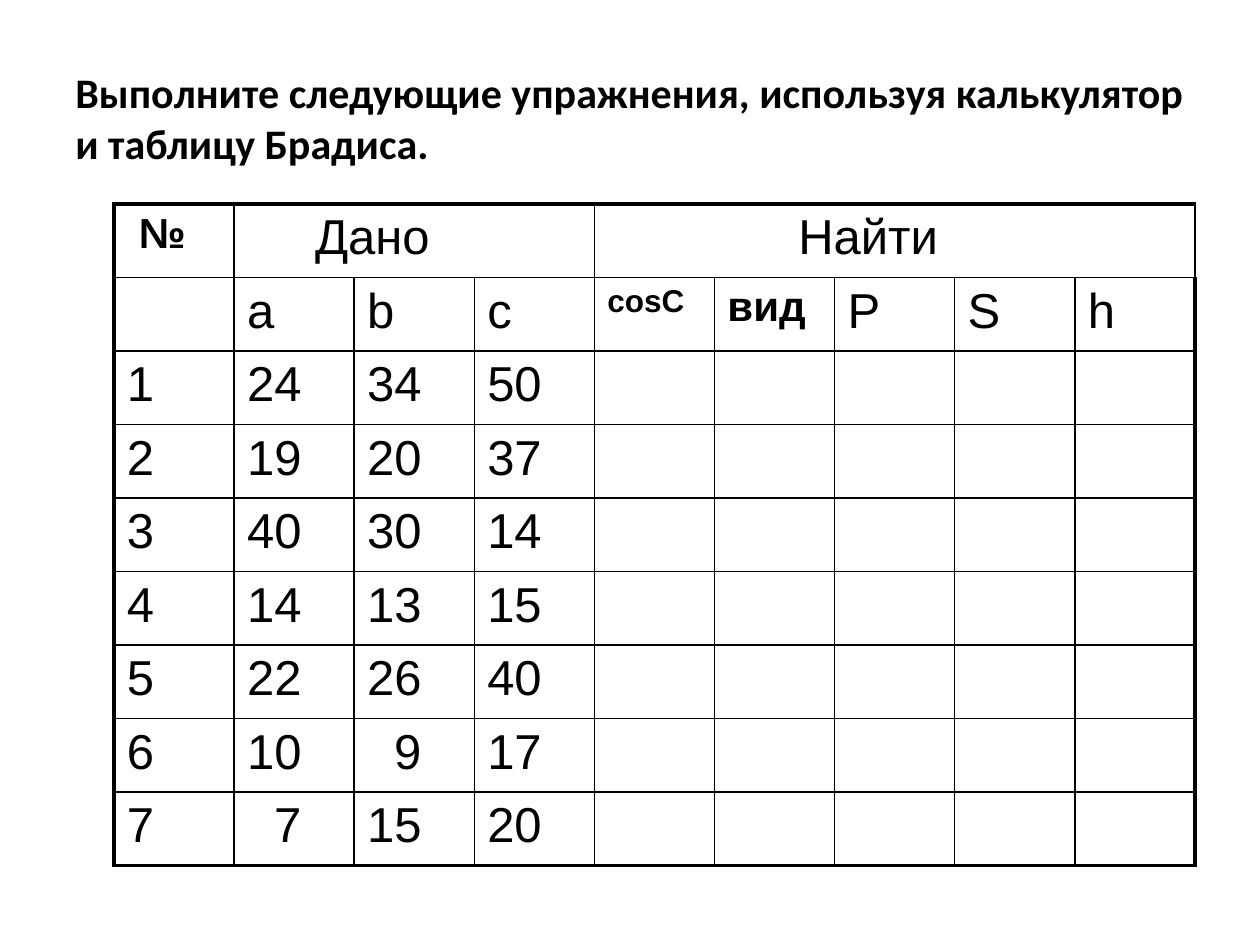
from lxml.etree import SubElement
from pptx import Presentation
from pptx.dml.color import RGBColor
from pptx.enum.text import MSO_ANCHOR
from pptx.oxml.ns import qn
from pptx.util import Emu, Pt

PX = 914400 / 126
THIN, THICK = 1, 2.25
CELL_MARGIN = 13


def px(length):
    return Emu(round(length * PX))


def color(hex_code):
    return RGBColor.from_string(hex_code)


class ExerciseSlide:
    ink = "000000"
    heading_font = "Calibri"
    table_font = "Arial"

    def __init__(self, presentation):
        self.slide = presentation.slides.add_slide(presentation.slide_layouts[6])

    def style_text(self, paragraph, text, font, size, bold=False):
        paragraph.text = text
        for run in paragraph.runs:
            run.font.name = font
            run.font.size = Pt(size)
            run.font.bold = bold
            run.font.color.rgb = color(self.ink)

    def heading(self, text, left, top, width, height):
        frame = self.slide.shapes.add_textbox(
            px(left), px(top), px(width), px(height)).text_frame
        frame.word_wrap = True
        frame.vertical_anchor = MSO_ANCHOR.MIDDLE
        self.style_text(frame.paragraphs[0], text, self.heading_font, 24, bold=True)

    def border(self, cell, side, weight):
        line = SubElement(cell._tc.get_or_add_tcPr(), qn(f"a:ln{side}"), w=str(Pt(weight)))
        fill = SubElement(line, qn("a:solidFill"))
        SubElement(fill, qn("a:srgbClr"), val=self.ink)

    def grid(self, rows, columns, left, top, width, height):
        table = self.slide.shapes.add_table(
            rows, columns, px(left), px(top), px(width), px(height)).table
        table.first_row = table.horz_banding = False
        for column in table.columns:
            column.width = px(width / columns)
        for row in table.rows:
            row.height = px(height / rows)
        # Thick outer frame, thin inner lines
        for r in range(rows):
            for c in range(columns):
                cell = table.cell(r, c)
                outer = {"L": c == 0, "R": c == columns - 1,
                         "T": r == 0, "B": r == rows - 1}
                for side, on_frame in outer.items():
                    self.border(cell, side, THICK if on_frame else THIN)
                cell.fill.background()
        return table

    def entry(self, cell, text, size=28, bold=False, indent=0):
        cell.margin_left = px(CELL_MARGIN + indent)
        self.style_text(cell.text_frame.paragraphs[0], text, self.table_font, size, bold)


def main():
    presentation = Presentation()
    presentation.slide_width, presentation.slide_height = px(1260), px(945)
    exercise = ExerciseSlide(presentation)

    exercise.heading(
        "Выполните следующие упражнения, используя калькулятор и таблицу Брадиса.",
        63, 38, 1134, 158)

    triangles = [(24, 34, 50), (19, 20, 37), (40, 30, 14), (14, 13, 15),
                 (22, 26, 40), (10, 9, 17), (7, 15, 20)]
    table = exercise.grid(len(triangles) + 2, 9, 114, 204, 1081, 662)

    # Group headings
    table.cell(0, 1).merge(table.cell(0, 3))
    table.cell(0, 4).merge(table.cell(0, 8))
    exercise.entry(table.cell(0, 0), "№", size=24, bold=True, indent=12)
    exercise.entry(table.cell(0, 1), "Дано", indent=68)
    exercise.entry(table.cell(0, 4), "Найти", indent=191)

    # Column headings
    emphasis = {"cosС": (18, True), "вид": (24, True)}
    for c, label in enumerate(["a", "b", "c", "cosС", "вид", "Р", "S", "h"], 1):
        exercise.entry(table.cell(1, c), label, *emphasis.get(label, (28, False)))

    # Numbered triangles; single-digit sides line up with the units
    for number, sides in enumerate(triangles, 1):
        exercise.entry(table.cell(number + 1, 0), str(number))
        for c, side in enumerate(sides, 1):
            exercise.entry(table.cell(number + 1, c), str(side),
                           indent=27 if side < 10 else 0)

    presentation.save("out.pptx")


if __name__ == "__main__":
    main()
